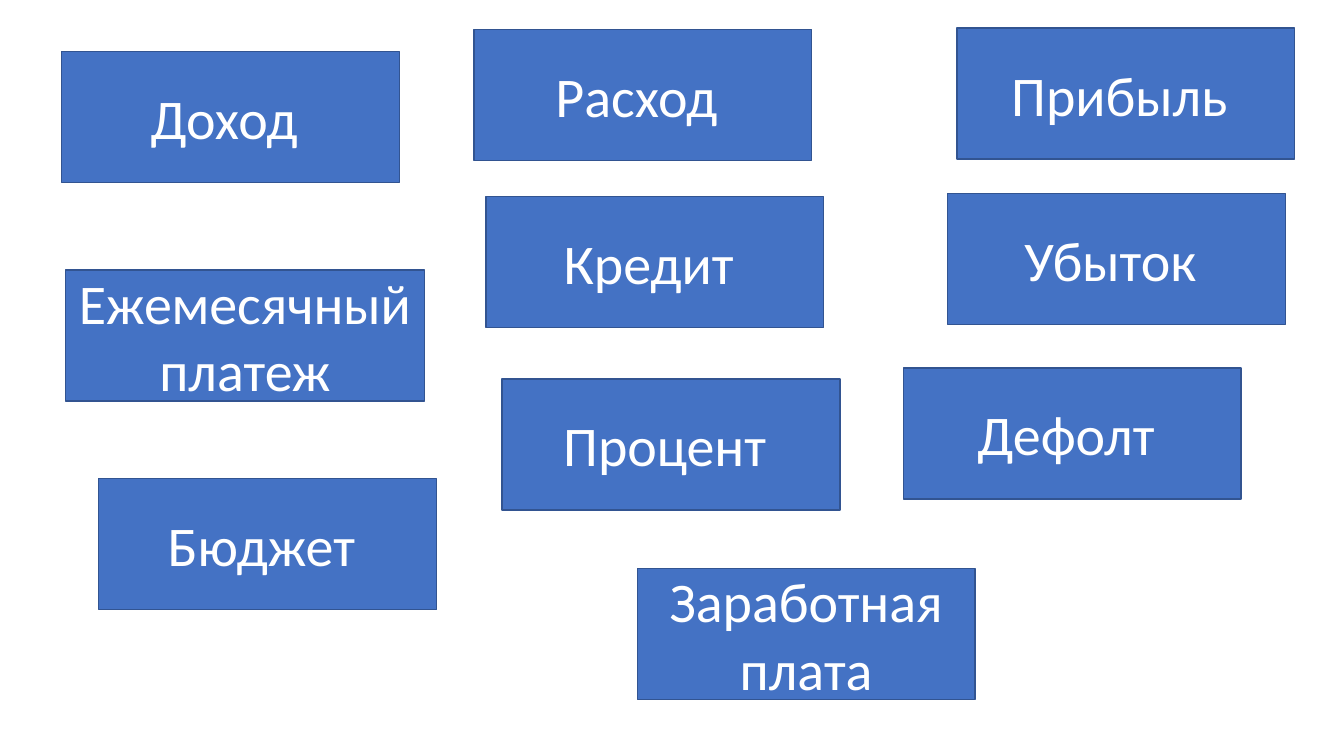
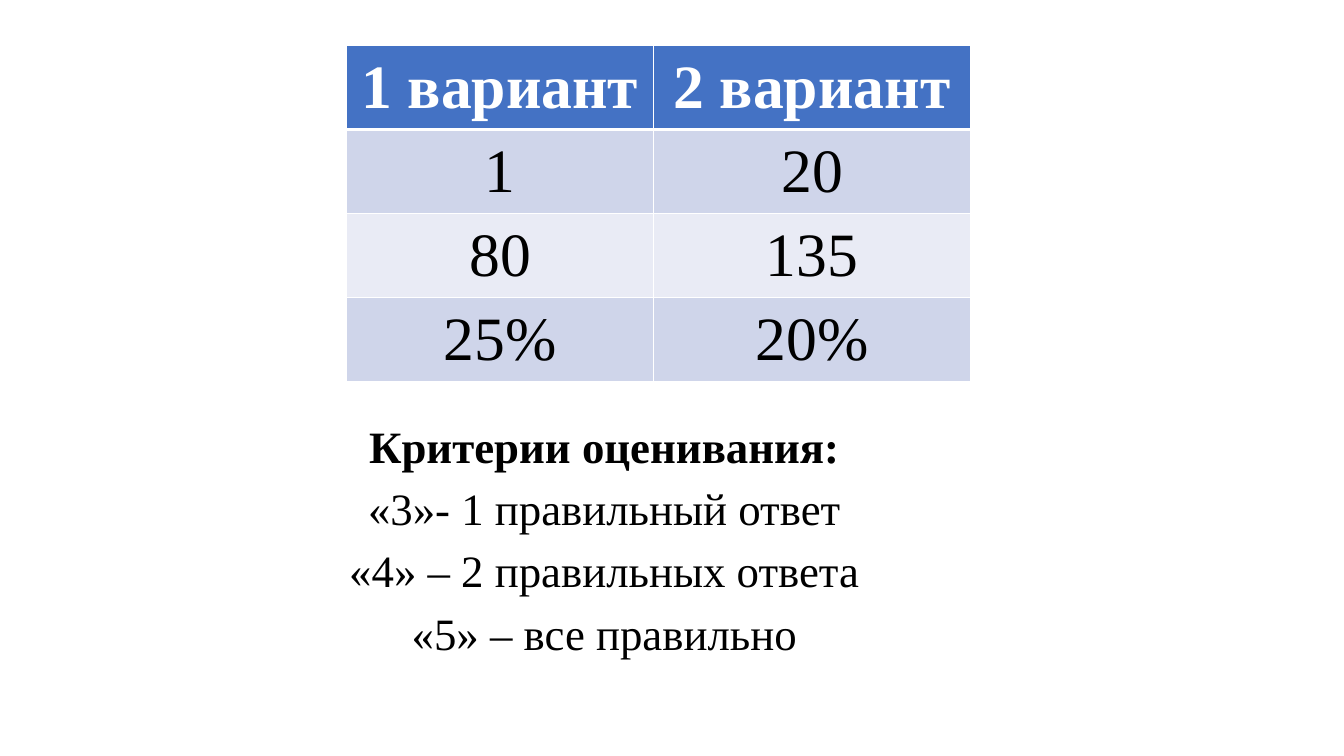
"""Build two slides for a financial literacy lesson: key terms and answers."""
from dataclasses import dataclass

from lxml import etree
from pptx import Presentation
from pptx.dml.color import RGBColor
from pptx.enum.shapes import MSO_SHAPE
from pptx.enum.text import MSO_ANCHOR, PP_ALIGN
from pptx.oxml.ns import qn
from pptx.util import Inches, Pt

RECTANGLE = MSO_SHAPE.RECTANGLE
MIDDLE = MSO_ANCHOR.MIDDLE
CENTER = PP_ALIGN.CENTER
BLANK_LAYOUT = 6


@dataclass(frozen=True)
class Theme:
    accent: str = "4472C4"
    outline: str = "325491"
    band_dark: str = "CFD5EA"
    band_light: str = "E9EBF5"
    white: str = "FFFFFF"
    black: str = "000000"
    sans: str = "Calibri"
    serif: str = "Times New Roman"
    term_size: int = 40
    table_size: int = 44
    criteria_size: int = 32
    thin: int = 1
    thick: int = 3


THEME = Theme()

CARD_WIDTH, CARD_HEIGHT = 3.35, 1.3
WIDE_CARD = 3.56
TERMS = [
    ("Доход ", 0.61, 0.51, CARD_WIDTH),
    ("Ежемесячный платеж", 0.65, 2.68, WIDE_CARD),
    ("Расход ", 4.7, 0.29, CARD_WIDTH),
    ("Кредит ", 4.82, 1.95, CARD_WIDTH),
    ("Бюджет ", 0.98, 4.75, CARD_WIDTH),
    ("Процент ", 4.98, 3.76, CARD_WIDTH),
    ("Заработная плата", 6.32, 5.64, CARD_WIDTH),
    ("Дефолт ", 8.96, 3.65, CARD_WIDTH),
    ("Убыток ", 9.4, 1.92, CARD_WIDTH),
    ("Прибыль ", 9.49, 0.28, CARD_WIDTH),
]

ANSWERS = [
    ("1 вариант", "2 вариант"),
    ("1", "20"),
    ("80", "135"),
    ("25%", "20%"),
]
ANSWER_WIDTHS = (3.04, 3.15)
ANSWER_ROW = 0.78

CRITERIA = [
    "Критерии оценивания:",
    "«3»- 1 правильный ответ",
    "«4» – 2 правильных ответа",
    "«5» – все правильно",
]


def rgb(value):
    """Turn a hex string into a colour."""
    return RGBColor.from_string(value)


def apply(target, values):
    """Set every attribute named in a dict of format values."""
    for name, value in values.items():
        setattr(target, name, value)


def write(paragraph, text, font, size, color, bold=False):
    """Put centred, formatted text in a paragraph."""
    paragraph.alignment = CENTER
    run = paragraph.add_run()
    run.text = text
    apply(run.font, {"name": font, "size": Pt(size), "bold": bold})
    run.font.color.rgb = rgb(color)


def add_term(slide, term, left, top, width):
    """Add one card with a term."""
    card = slide.shapes.add_shape(
        RECTANGLE, Inches(left), Inches(top), Inches(width), Inches(CARD_HEIGHT))
    card.shadow.inherit = False
    card.fill.solid()
    card.fill.fore_color.rgb = rgb(THEME.accent)
    card.line.color.rgb = rgb(THEME.outline)
    card.line.width = Pt(THEME.thin)
    apply(card.text_frame, {"word_wrap": True, "vertical_anchor": MIDDLE})
    write(card.text_frame.paragraphs[0], term, THEME.sans, THEME.term_size, THEME.white)


def add_borders(cell, widths):
    """Draw white cell borders from a dict of side and point width."""
    properties = cell._tc.get_or_add_tcPr()
    for side, width in widths.items():
        border = etree.SubElement(properties, qn(f"a:ln{side}"), w=str(Pt(width)))
        fill = etree.SubElement(border, qn("a:solidFill"))
        etree.SubElement(fill, qn("a:srgbClr"), val=THEME.white)


def format_cell(cell, text, row):
    """Fill, border and write one cell according to its row."""
    header = row == 0
    add_borders(cell, {
        "L": THEME.thin,
        "R": THEME.thin,
        "T": THEME.thick if row == 1 else THEME.thin,
        "B": THEME.thick if header else THEME.thin,
    })
    band = THEME.band_dark if row % 2 else THEME.band_light
    cell.fill.solid()
    cell.fill.fore_color.rgb = rgb(THEME.accent if header else band)
    cell.vertical_anchor = MIDDLE
    write(cell.text_frame.paragraphs[0], text, THEME.serif, THEME.table_size,
          THEME.white if header else THEME.black, header)


def add_answers(slide, left, top):
    """Add the table of answers for both variants."""
    answers = slide.shapes.add_table(
        len(ANSWERS), len(ANSWER_WIDTHS), Inches(left), Inches(top),
        Inches(sum(ANSWER_WIDTHS)), Inches(ANSWER_ROW * len(ANSWERS))).table
    for column, width in zip(answers.columns, ANSWER_WIDTHS):
        column.width = Inches(width)
    for row, texts in enumerate(ANSWERS):
        answers.rows[row].height = Inches(ANSWER_ROW)
        for column, text in enumerate(texts):
            format_cell(answers.cell(row, column), text, row)


def add_criteria(slide, left, top, width, height):
    """Add the grading criteria under a bold heading."""
    frame = slide.shapes.add_textbox(
        Inches(left), Inches(top), Inches(width), Inches(height)).text_frame
    frame.word_wrap = True
    for index, text in enumerate(CRITERIA):
        paragraph = frame.add_paragraph() if index else frame.paragraphs[0]
        apply(paragraph, {"line_spacing": 0.9, "space_before": Pt(10 if index else 0)})
        write(paragraph, text, THEME.serif, THEME.criteria_size, THEME.black, index == 0)


def main():
    """Build and save the presentation."""
    deck = Presentation()
    apply(deck, {"slide_width": Inches(13.33), "slide_height": Inches(7.5)})
    layout = deck.slide_layouts[BLANK_LAYOUT]

    terms_slide = deck.slides.add_slide(layout)
    for term in TERMS:
        add_term(terms_slide, *term)

    answers_slide = deck.slides.add_slide(layout)
    add_criteria(answers_slide, 3.01, 4.16, 5.97, 2.75)
    add_answers(answers_slide, 3.44, 0.45)

    deck.save("out.pptx")


if __name__ == "__main__":
    main()
